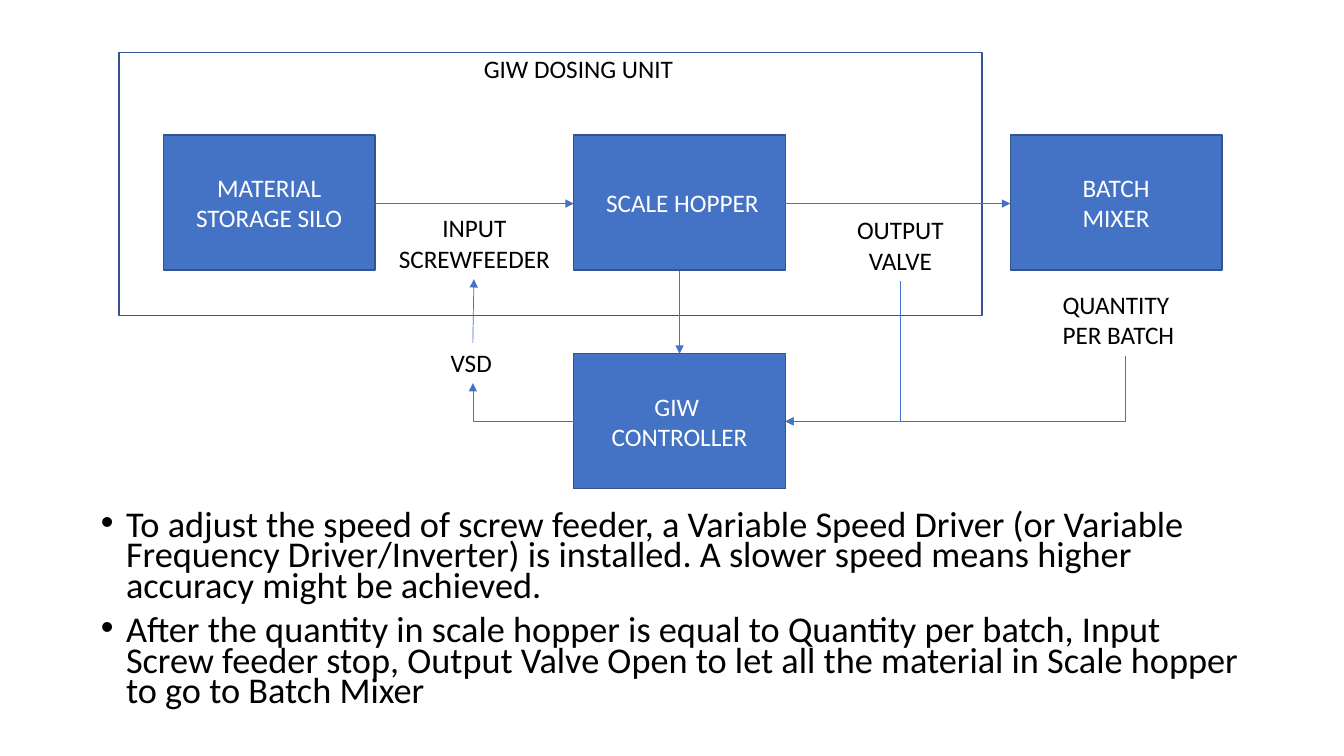
"""Build the slide that explains the dosing unit and its controller."""
from dataclasses import dataclass

from lxml.etree import SubElement
from pptx import Presentation
from pptx.dml.color import RGBColor
from pptx.enum.shapes import MSO_CONNECTOR, MSO_SHAPE
from pptx.enum.text import MSO_ANCHOR, MSO_AUTO_SIZE, PP_ALIGN
from pptx.oxml.ns import qn
from pptx.util import Pt

EMU_PER_PX = 9144
COLORS = {"blue": "4472C4", "edge": "325491", "white": "FFFFFF", "black": "000000"}
BOX_WIDTH, BOX_HEIGHT = 210, 134
TOP_ROW, BOTTOM_ROW = 134, 351
INDENT = 25


@dataclass(frozen=True)
class Box:
    left: int
    top: int
    lines: tuple[str, ...]


@dataclass(frozen=True)
class Label:
    left: int
    top: int
    width: int
    height: int
    lines: tuple[str, ...]
    align: PP_ALIGN = PP_ALIGN.LEFT


@dataclass(frozen=True)
class Arrow:
    start: tuple[int, int]
    end: tuple[int, int]
    turn: int | None = None


BOXES = (
    Box(569, TOP_ROW, (" SCALE HOPPER",)),
    Box(162, TOP_ROW, ("MATERIAL STORAGE SILO",)),
    Box(1002, TOP_ROW, ("BATCH", "MIXER")),
    Box(569, BOTTOM_ROW, ("GIW ", "CONTROLLER")),
)
LABELS = (
    Label(835, 208, 116, 71, ("OUTPUT", "VALVE"), PP_ALIGN.CENTER),
    Label(470, 48, 237, 40, ("GIW DOSING UNIT",)),
    Label(379, 206, 183, 71, ("INPUT", "SCREWFEEDER"), PP_ALIGN.CENTER),
    Label(1044, 282, 143, 71, ("QUANTITY PER BATCH",)),
    Label(437, 340, 65, 40, ("VSD",)),
)
ARROWS = (
    Arrow((372, 202), (569, 202)),
    Arrow((779, 202), (1002, 202)),
    Arrow((674, 269), (674, 351)),
    Arrow((469, 340), (470, 277)),
    Arrow((1116, 353), (779, 418), 90),
    Arrow((893, 279), (779, 418), 90),
    Arrow((569, 418), (469, 380), 180),
)
BULLETS = (
    "To adjust the speed of screw feeder, a Variable Speed Driver (or Variable "
    "Frequency Driver/Inverter) is installed. A slower speed means higher "
    "accuracy might be achieved.",
    "After the quantity in scale hopper is equal to Quantity per batch, Input "
    "Screw feeder stop, Output Valve Open to let all the material in Scale hopper "
    "to go to Batch Mixer",
)


def px(*lengths: float) -> list[int]:
    return [round(length * EMU_PER_PX) for length in lengths]


def color(name: str) -> RGBColor:
    return RGBColor.from_string(COLORS[name])


def set_all(target, values: dict) -> None:
    for name, value in values.items():
        setattr(target, name, value)


def write(text_frame, lines: tuple[str, ...], size: float, ink: str, style: dict) -> None:
    set_all(text_frame, {"word_wrap": True, "auto_size": MSO_AUTO_SIZE.NONE})
    text_frame.text = "\n".join(lines)
    for paragraph in text_frame.paragraphs:
        set_all(paragraph, style)
        for run in paragraph.runs:
            set_all(run.font, {"name": "Calibri", "size": Pt(size)})
            run.font.color.rgb = color(ink)


def draw_rectangle(slide, left: int, top: int, width: int, height: int):
    shape = slide.shapes.add_shape(MSO_SHAPE.RECTANGLE, *px(left, top, width, height))
    shape.shadow.inherit = False
    shape.line.color.rgb = color("edge")
    shape.line.width = Pt(1)
    return shape


def draw_box(slide, box: Box) -> None:
    shape = draw_rectangle(slide, box.left, box.top, BOX_WIDTH, BOX_HEIGHT)
    shape.fill.solid()
    shape.fill.fore_color.rgb = color("blue")
    shape.text_frame.vertical_anchor = MSO_ANCHOR.MIDDLE
    write(shape.text_frame, box.lines, 18, "white", {"alignment": PP_ALIGN.CENTER})


def draw_label(slide, label: Label) -> None:
    shape = slide.shapes.add_textbox(*px(label.left, label.top, label.width, label.height))
    write(shape.text_frame, label.lines, 18, "black", {"alignment": label.align})


def draw_arrow(slide, arrow: Arrow) -> None:
    (x1, y1), (x2, y2) = arrow.start, arrow.end
    kind = MSO_CONNECTOR.STRAIGHT
    if arrow.turn is not None:
        kind = MSO_CONNECTOR.ELBOW
        middle_x, middle_y = (x1 + x2) / 2, (y1 + y2) / 2
        width, height = abs(x2 - x1), abs(y2 - y1)
        if arrow.turn == 90:
            width, height = height, width
        x1, x2 = middle_x - width / 2, middle_x + width / 2
        y1, y2 = middle_y - height / 2, middle_y + height / 2
    connector = slide.shapes.add_connector(kind, *px(x1, y1, x2, y2))
    connector.line.color.rgb = color("blue")
    connector.line.width = Pt(0.5)
    properties = connector.element.spPr
    if arrow.turn is not None:
        properties.find(qn("a:xfrm")).set("rot", str(arrow.turn * 60000))
        properties.find(qn("a:prstGeom")).set("prst", "bentConnector2")
    SubElement(properties.find(qn("a:ln")), qn("a:tailEnd"), type="triangle")
    SubElement(properties, qn("a:effectLst"))


def fill_body(body) -> None:
    left, top, width, height = px(90, 504, 1150, 221)
    set_all(body, {"left": left, "top": top, "width": width, "height": height})
    write(body.text_frame, BULLETS, 25.9, "black",
          {"alignment": PP_ALIGN.LEFT, "line_spacing": 0.7, "space_before": Pt(10)})
    for paragraph in body.text_frame.paragraphs:
        properties = paragraph._p.get_or_add_pPr()
        properties.set("marL", str(INDENT * EMU_PER_PX))
        properties.set("indent", str(-INDENT * EMU_PER_PX))


def main() -> None:
    presentation = Presentation()
    width, height = px(1333, 750)
    set_all(presentation, {"slide_width": width, "slide_height": height})
    slide = presentation.slides.add_slide(presentation.slide_layouts[1])
    title = slide.shapes.title.element
    title.getparent().remove(title)
    fill_body(slide.placeholders[1])
    draw_rectangle(slide, 118, 52, 856, 261).fill.background()
    for box in BOXES:
        draw_box(slide, box)
    for label in LABELS:
        draw_label(slide, label)
    for arrow in ARROWS:
        draw_arrow(slide, arrow)
    presentation.save("out.pptx")


if __name__ == "__main__":
    main()
